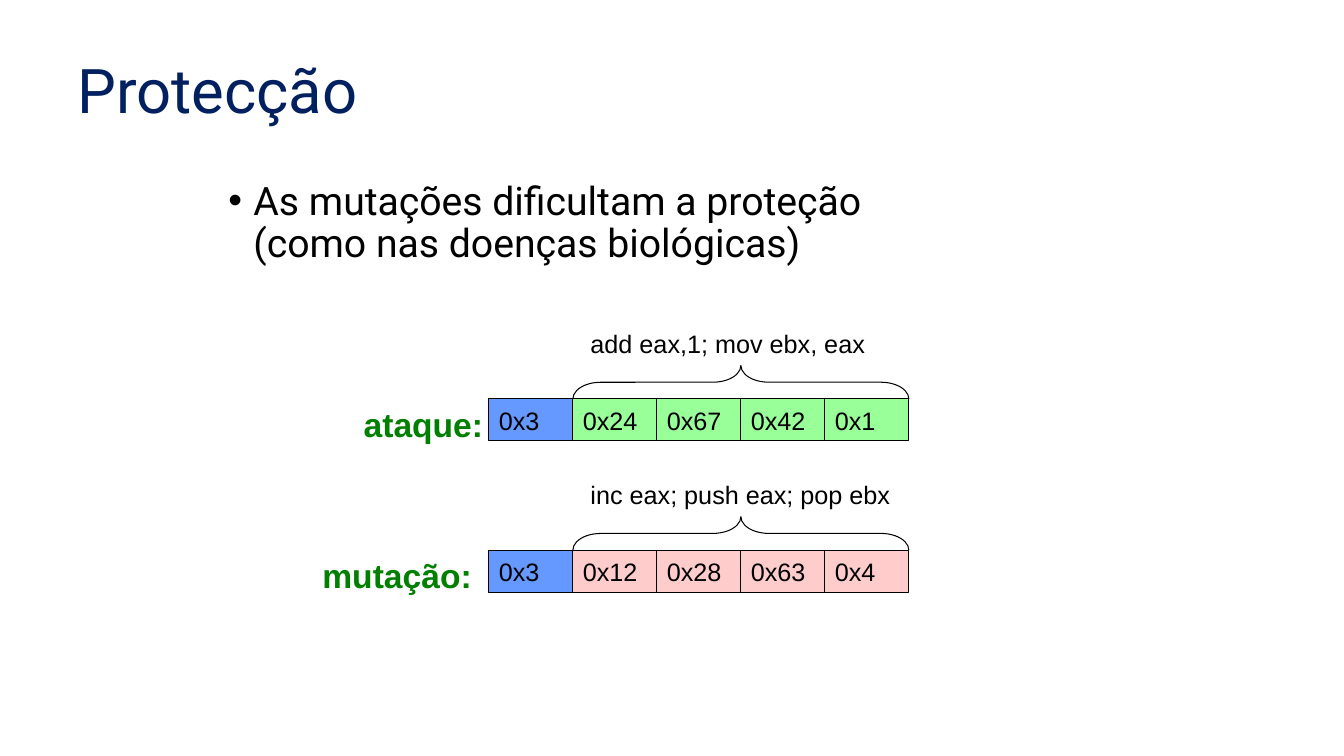
from pptx import Presentation
from pptx.dml.color import RGBColor
from pptx.enum.shapes import MSO_SHAPE
from pptx.enum.text import MSO_ANCHOR, MSO_AUTO_SIZE, PP_ALIGN
from pptx.oxml.ns import qn
from pptx.util import Pt
from lxml.etree import SubElement

CELL_LEFT, CELL_WIDTH, CELL_HEIGHT = 349.2, 60, 30
BRACE_HEIGHT = 24
BLACK, GREEN, OPCODE_BLUE = "000000", "008000", "6699FF"
ROWS = [
    ("ataque:", 252.7, 102, "add eax,1; mov ebx, eax",
     ["0x3", "0x24", "0x67", "0x42", "0x1"], "99FF99", 285),
    ("mutação:", 223.2, 126, "inc eax; push eax; pop ebx",
     ["0x3", "0x12", "0x28", "0x63", "0x4"], "FFCCCC", 393),
]


def color(hex_string):
    return RGBColor.from_string(hex_string)


def add_run(paragraph, text, size, hex_string, font="Arial", bold=False):
    run = paragraph.add_run()
    run.text = text
    run.font.size = Pt(size)
    run.font.name = font
    run.font.bold = bold
    run.font.color.rgb = color(hex_string)


def outline(shape):
    shape.shadow.inherit = False
    shape.line.color.rgb = color(BLACK)
    shape.line.width = Pt(0.75)


def add_title(slide, text):
    title = slide.shapes.title
    title.left, title.top, title.width, title.height = Pt(48), Pt(21.6), Pt(864), Pt(90)
    frame = title.text_frame
    frame.auto_size = MSO_AUTO_SIZE.NONE
    frame.vertical_anchor = MSO_ANCHOR.MIDDLE
    paragraph = frame.paragraphs[0]
    paragraph.alignment = PP_ALIGN.LEFT
    paragraph.line_spacing = 0.9
    add_run(paragraph, text, 44, "002060", "Roboto")


def add_bullet(slide, lines):
    frame = slide.shapes.add_textbox(Pt(156), Pt(126), Pt(690), Pt(356.4)).text_frame
    frame.word_wrap = True
    paragraph = frame.paragraphs[0]
    paragraph.line_spacing = 0.9
    paragraph.space_before = Pt(10)
    properties = paragraph._p.get_or_add_pPr()
    properties.set("marL", str(Pt(18)))
    properties.set("indent", str(Pt(-18)))
    SubElement(properties, qn("a:buFont")).set("typeface", "Arial")
    SubElement(properties, qn("a:buChar")).set("char", "•")
    for index, line in enumerate(lines):
        if index:
            paragraph.add_line_break()
        add_run(paragraph, line, 28, BLACK, "Roboto")


def add_label(group, text, left, top, width, height, size, hex_string, bold=False):
    frame = group.shapes.add_textbox(Pt(left), Pt(top), Pt(width), Pt(height)).text_frame
    frame.word_wrap = True
    frame.auto_size = MSO_AUTO_SIZE.SHAPE_TO_FIT_TEXT
    add_run(frame.paragraphs[0], text, size, hex_string, bold=bold)


def add_cell(group, code, left, top, fill):
    cell = group.shapes.add_shape(
        MSO_SHAPE.RECTANGLE, Pt(left), Pt(top), Pt(CELL_WIDTH), Pt(CELL_HEIGHT))
    outline(cell)
    cell.fill.solid()
    cell.fill.fore_color.rgb = color(fill)
    frame = cell.text_frame
    frame.vertical_anchor = MSO_ANCHOR.MIDDLE
    paragraph = frame.paragraphs[0]
    paragraph.alignment = PP_ALIGN.LEFT
    add_run(paragraph, code, 18, BLACK)


def add_brace(group, left, bottom, span):
    center_x, center_y = left + span / 2, bottom - BRACE_HEIGHT / 2
    brace = group.shapes.add_shape(
        MSO_SHAPE.LEFT_BRACE, Pt(center_x - BRACE_HEIGHT / 2), Pt(center_y - span / 2),
        Pt(BRACE_HEIGHT), Pt(span))
    brace.rotation = 90
    brace.adjustments[0] = 0.83
    brace.fill.background()
    outline(brace)


def add_code_row(slide, name, name_left, name_width, instructions, codes, fill, top):
    group = slide.shapes.add_group_shape()
    for index, code in enumerate(codes):
        add_cell(group, code, CELL_LEFT + index * CELL_WIDTH, top,
                 fill if index else OPCODE_BLUE)
    operands_left = CELL_LEFT + CELL_WIDTH
    add_brace(group, operands_left, top, CELL_WIDTH * (len(codes) - 1))
    add_label(group, name, name_left, top, name_width, 36, 24, GREEN, bold=True)
    add_label(group, instructions, operands_left + 5.5, top - 54, 246, 28.8, 18, BLACK)


def main():
    presentation = Presentation()
    presentation.slide_width, presentation.slide_height = Pt(960), Pt(540)
    slide = presentation.slides.add_slide(presentation.slide_layouts[5])
    add_title(slide, "Protecção")
    add_bullet(slide, ["As mutações dificultam a proteção", "(como nas doenças biológicas)"])
    for row in ROWS:
        add_code_row(slide, *row)
    presentation.save("out.pptx")


if __name__ == "__main__":
    main()
